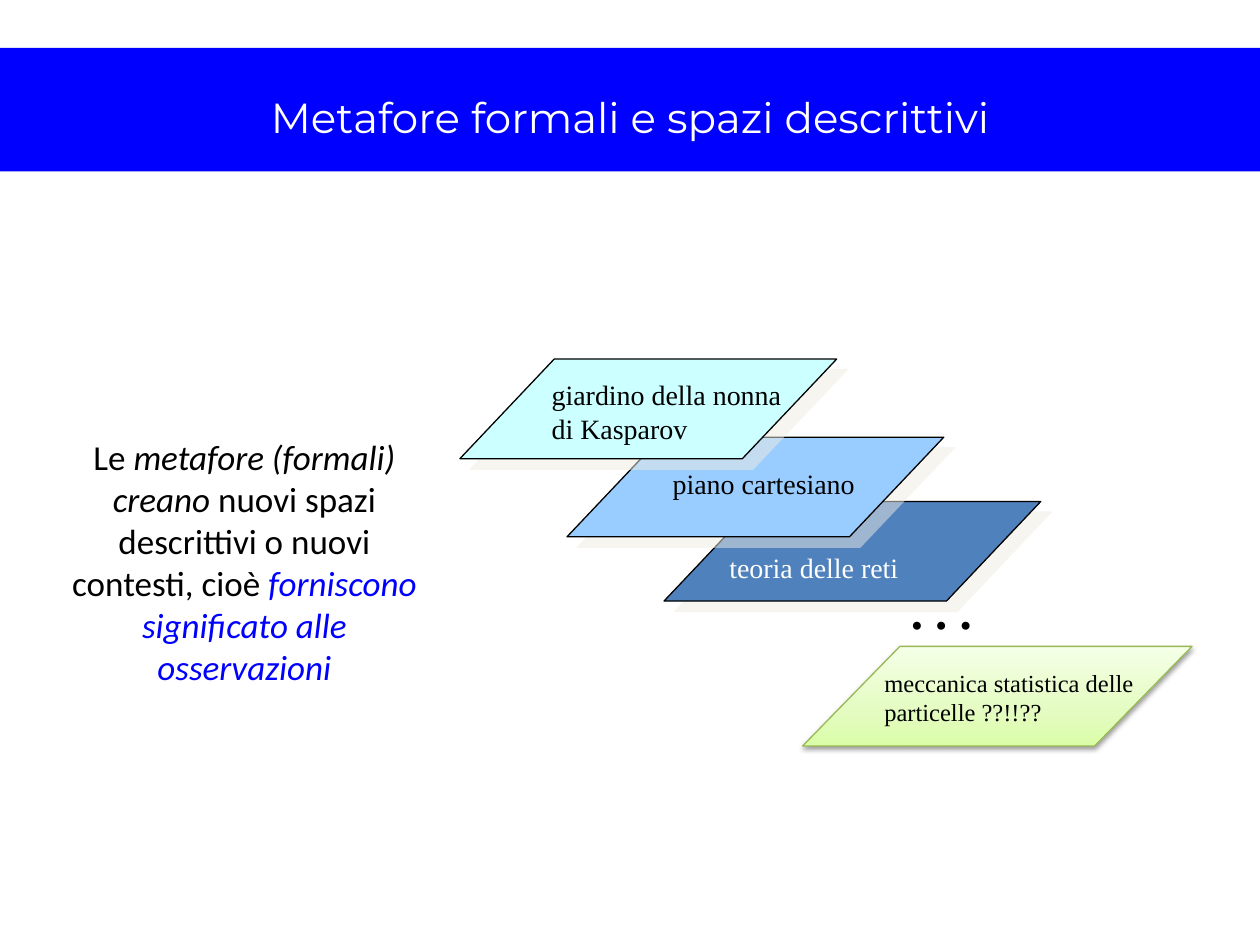
from dataclasses import dataclass

from lxml.etree import SubElement as Sub
from pptx import Presentation
from pptx.dml.color import RGBColor as Rgb
from pptx.enum.shapes import MSO_SHAPE as Kind
from pptx.enum.text import MSO_ANCHOR as Anchor, PP_ALIGN as Align
from pptx.oxml.ns import qn
from pptx.util import Inches, Pt


@dataclass(frozen=True)
class Theme:
    black: str = "000000"
    white: str = "FFFFFF"
    blue: str = "0000FF"
    cyan: str = "CCFFFF"
    sky: str = "99CCFF"
    steel: str = "4F81BD"
    cream: str = "EEECE1"
    green: str = "98B955"
    fade: tuple = ((0, "DAFDA7"), (35, "E4FCC2"), (100, "F5FFE7"))
    head: str = "Montserrat"
    body: str = "Calibri"
    label: str = "Times New Roman"
    title: int = 24
    text: int = 20
    name: int = 16
    small: int = 14
    dots: int = 28


T = Theme()


def place(shape, box):
    shape.left, shape.top, shape.width, shape.height = map(Inches, box)


def add_run(para, text, font, size, color, bold=False, italic=False):
    run = para.add_run()
    run.text = text
    run.font.name, run.font.size = font, Pt(size)
    run.font.bold, run.font.italic = bold, italic
    run.font.color.rgb = Rgb.from_string(color)


def add_box(slide, box, align=Align.LEFT):
    """Add a wrapping text box and return its paragraph."""
    frame = slide.shapes.add_textbox(*map(Inches, box)).text_frame
    frame.word_wrap = True
    para = frame.paragraphs[0]
    para.alignment = align
    return para


def add_label(slide, box, text, size=T.name, color=T.black, bold=False):
    add_run(add_box(slide, box), text, T.label, size, color, bold)


def add_color(parent, color, alpha=100):
    node = Sub(parent, qn("a:srgbClr"), val=color)
    if alpha < 100:
        Sub(node, qn("a:alpha"), val=str(alpha * 1000))


def add_shadow(shape, color, alpha, blur, dist, angle):
    shape.shadow.inherit = False
    effects = shape._element.spPr.find(qn("a:effectLst"))
    node = Sub(effects, qn("a:outerShdw"), blurRad=str(Pt(blur)),
               dist=str(Pt(dist)), dir=str(angle * 60000),
               algn="ctr", rotWithShape="0")
    add_color(node, color, alpha)


def set_fade(shape, stops):
    """Fill with a gradient that runs from bottom to top."""
    shape.fill.gradient()
    shape.fill.gradient_angle = 90
    group = shape._element.spPr.find(qn("a:gradFill")).find(qn("a:gsLst"))
    for old in list(group):
        group.remove(old)
    for pos, color in stops:
        add_color(Sub(group, qn("a:gs"), pos=str(pos * 1000)), color)


def add_plane(slide, left, top, line, width=2.99, slant=0.947):
    box = map(Inches, (left, top, width, 0.79))
    plane = slide.shapes.add_shape(Kind.PARALLELOGRAM, *box)
    plane.adjustments[0] = slant
    plane.line.color.rgb = Rgb.from_string(line)
    plane.line.width = Pt(0.75)
    return plane


def add_stack(slide):
    for left, top, color in ((5.27, 3.98, T.steel), (4.5, 3.47, T.sky),
                             (3.65, 2.85, T.cyan)):
        plane = add_plane(slide, left, top, T.black)
        plane.fill.solid()
        plane.fill.fore_color.rgb = Rgb.from_string(color)
        add_shadow(plane, T.cream, 50, 0, 8.5, 45)
    add_label(slide, (4.28, 2.95, 2.05, 0.64),
              "giardino della nonna di Kasparov")
    add_label(slide, (5.24, 3.65, 1.93, 0.37), "piano cartesiano")
    add_label(slide, (5.69, 4.32, 2.69, 0.37), "teoria delle reti",
              color=T.white)
    add_label(slide, (7.13, 4.56, 1.35, 0.57), ". . .", T.dots, bold=True)

    last = add_plane(slide, 6.37, 5.13, T.green, 3.09, 0.977)
    set_fade(last, T.fade)
    add_shadow(last, T.black, 38, 3.1, 1.6, 90)
    add_label(slide, (6.92, 5.25, 2.22, 0.57),
              "meccanica statistica delle particelle ??!!??", T.small)


def add_claim(slide):
    para = add_box(slide, (0.43, 3.41, 3.02, 2.12), Align.CENTER)
    for text, color, italic in (
            ("Le ", T.black, False),
            ("metafore (formali) creano ", T.black, True),
            ("nuovi spazi descrittivi o nuovi contesti, cioè ",
             T.black, False),
            ("forniscono significato alle osservazioni", T.blue, True)):
        add_run(para, text, T.body, T.text, color, italic=italic)


def add_title(slide, text):
    band = slide.shapes.add_shape(Kind.RECTANGLE,
                                  *map(Inches, (0, 0.38, 10, 0.98)))
    band.shadow.inherit = False
    band.fill.solid()
    band.fill.fore_color.rgb = Rgb.from_string(T.blue)
    band.line.fill.background()

    title = slide.shapes.title
    place(title, (0.5, 0.3, 9, 1.25))
    band._element.addnext(title._element)  # title in front of the band
    frame = title.text_frame
    frame.vertical_anchor = Anchor.MIDDLE
    para = frame.paragraphs[0]
    para.alignment = Align.CENTER
    add_run(para, text, T.head, T.title, T.white)


def main():
    deck = Presentation()
    deck.slide_width, deck.slide_height = Inches(10), Inches(7.5)
    slide = deck.slides.add_slide(deck.slide_layouts[5])
    add_claim(slide)
    add_stack(slide)
    add_title(slide, "Metafore formali e spazi descrittivi")
    deck.save("out.pptx")


if __name__ == "__main__":
    main()
